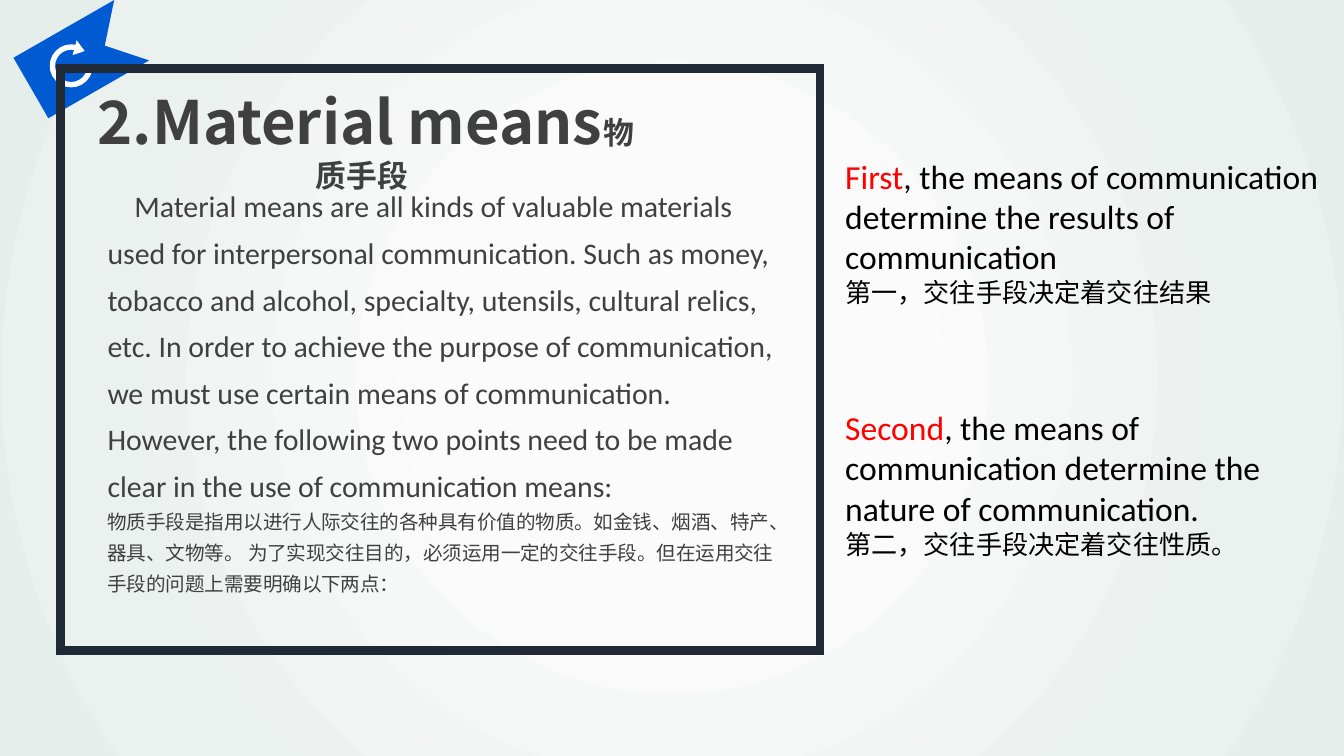
from math import cos, radians, sin

from lxml.etree import SubElement
from pptx import Presentation
from pptx.dml.color import RGBColor
from pptx.enum.shapes import MSO_SHAPE
from pptx.enum.text import MSO_ANCHOR, PP_ALIGN
from pptx.oxml import parse_xml
from pptx.oxml.ns import nsdecls, qn
from pptx.util import Inches, Pt

# Content
WIDTH = 10
HEIGHT = WIDTH * 9 / 16
LATIN, CHINESE, HEADING = "Calibri", "Noto Sans CJK SC", "Noto Sans CJK JP"
BLUE, NAVY, GREY, RED, BLACK, WHITE = "005BD3", "202A36", "404040", "FF0000", "000000", "FFFFFF"
GRADIENT = [(30, "FBFBFB"), (74, "EBF1EF"), (100, "E6EEEC")]

# Each paragraph is a list of runs: text, size, font, colour
TITLE = [[("2.Material means", 32, HEADING, GREY), ("物质手段 ", 16.5, CHINESE, GREY)]]
BODY = [
    [("Material means are all kinds of valuable materials used for interpersonal "
      "communication. Such as money, tobacco and alcohol, specialty, utensils, cultural "
      "relics, etc. In order to achieve the purpose of communication, we must use certain "
      "means of communication. However, the following two points need to be made clear in "
      "the use of communication means:", 16, LATIN, GREY)],
    [("物质手段是指用以进行人际交往的各种具有价值的物质。如金钱、烟酒、特产、器具、文物等。 "
      "为了实现交往目的，必须运用一定的交往手段。但在运用交往手段的问题上需要明确以下两点：",
      10.5, CHINESE, GREY)],
]
POINTS = [
    (1.11, 3.81, "First", ", the means of communication determine the results of communication",
     "第一，交往手段决定着交往结果"),
    (2.98, 3.52, "Second", ", the means of communication determine the nature of communication.",
     "第二，交往手段决定着交往性质。"),
]

RIBBON = [(0.36, 0.88), (0.1, 0.43), (0.85, 0), (0.78, 0.34), (1.11, 0.45)]
ARROWHEAD = [(0.54, 0.41), (0.57, 0.3), (0.63, 0.38)]
RING_CENTRE, RING_OUTER, RING_INNER = (0.53, 0.49), 0.16, 0.12
UNITS_PER_INCH = 1000  # freeform points are rounded to whole units

presentation = Presentation()
presentation.slide_width, presentation.slide_height = Inches(WIDTH), Inches(HEIGHT)
slide = presentation.slides.add_slide(presentation.slide_layouts[6])


def colour(value):
    return RGBColor.from_string(value)


def add_rectangle(left, top, width, height):
    shape = slide.shapes.add_shape(
        MSO_SHAPE.RECTANGLE, Inches(left), Inches(top), Inches(width), Inches(height))
    shape.shadow.inherit = False
    return shape


def add_polygon(points, fill):
    units = [(x * UNITS_PER_INCH, y * UNITS_PER_INCH) for x, y in points]
    builder = slide.shapes.build_freeform(*units[0], scale=Inches(1) / UNITS_PER_INCH)
    builder.add_line_segments(units[1:], close=True)
    shape = builder.convert_to_shape()
    shape.shadow.inherit = False
    shape.fill.solid()
    shape.fill.fore_color.rgb = colour(fill)
    shape.line.fill.background()


def arc(radius, angles):
    x, y = RING_CENTRE
    return [(x + radius * cos(radians(a)), y + radius * sin(radians(a))) for a in angles]


def add_text(left, top, width, height, paragraphs, inset=(0.1, 0.05), bold=False):
    box = slide.shapes.add_textbox(Inches(left), Inches(top), Inches(width), Inches(height))
    frame = box.text_frame
    frame.word_wrap = True
    frame.vertical_anchor = MSO_ANCHOR.TOP
    frame.margin_left = frame.margin_right = Inches(inset[0])
    frame.margin_top = frame.margin_bottom = Inches(inset[1])
    for index, runs in enumerate(paragraphs):
        paragraph = frame.paragraphs[0] if index == 0 else frame.add_paragraph()
        for text, size, font, tint in runs:
            run = paragraph.add_run()
            run.text = text
            run.font.size = Pt(size)
            run.font.name = font
            run.font.bold = bold
            run.font.color.rgb = colour(tint)
            east_asian = CHINESE if font == LATIN else font
            SubElement(run.font._element, qn("a:ea")).set("typeface", east_asian)
    return frame.paragraphs


# Background with a radial gradient
background = add_rectangle(0, 0, WIDTH, HEIGHT)
background.line.fill.background()
stops = "".join(f'<a:gs pos="{position * 1000}"><a:srgbClr val="{value}"/></a:gs>'
                for position, value in GRADIENT)
background._element.spPr.find(qn("a:prstGeom")).addnext(parse_xml(
    f'<a:gradFill {nsdecls("a")} rotWithShape="1"><a:gsLst>{stops}</a:gsLst><a:path path="circle">'
    '<a:fillToRect l="50000" t="50000" r="50000" b="50000"/></a:path></a:gradFill>'))

# Ribbon with a circular arrow
add_polygon(RIBBON, BLUE)
sweep = range(0, 286, 15)
add_polygon(arc(RING_OUTER, sweep) + arc(RING_INNER, reversed(sweep)), WHITE)
add_polygon(ARROWHEAD, WHITE)

# Frame with square corners
frame_box = add_rectangle(0.45, 0.51, 5.65, 4.33)
frame_box.fill.background()
frame_box.line.color.rgb = colour(NAVY)
frame_box.line.width = Pt(4.5)
SubElement(frame_box.line._get_or_add_ln(), qn("a:miter")).set("lim", "800000")

# Title and body
for paragraph in add_text(0.65, 0.59, 4.14, 0.61, TITLE, (0.07, 0.04), bold=True):
    paragraph.alignment = PP_ALIGN.CENTER
body = add_text(0.73, 1.28, 5.15, 3.21, BODY, (0.07, 0.04))
for paragraph in body:
    paragraph.line_spacing = 1.3
body[0]._p.get_or_add_pPr().set("indent", str(Inches(0.2)))

# Two points on the right
for top, width, lead, rest, translation in POINTS:
    add_text(6.19, top, width, 1.24, [
        [(lead, 18, LATIN, RED), (rest, 18, LATIN, BLACK)],
        [(translation, 14, CHINESE, BLACK)],
    ])

presentation.save("out.pptx")
